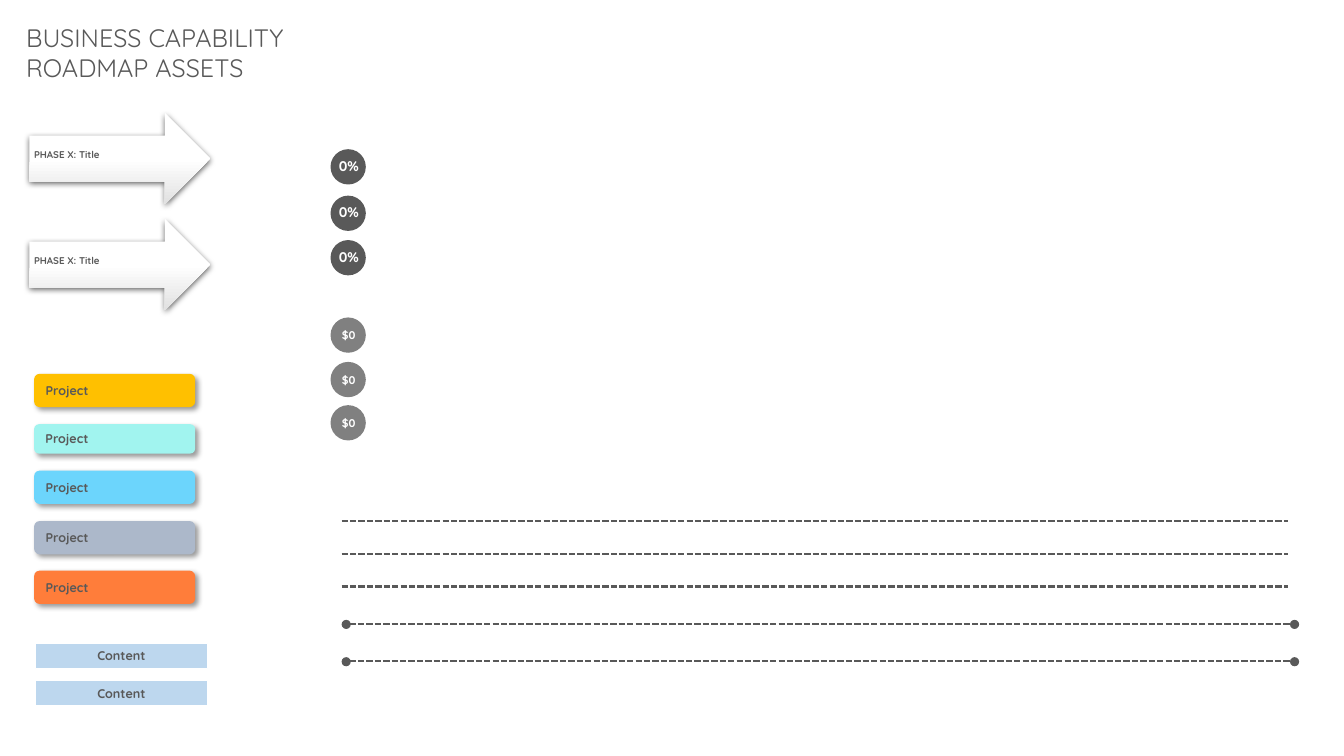
import pptx
import pptx.util
import pptx.dml.color
import pptx.enum.dml
import pptx.enum.shapes
import pptx.enum.text
import pptx.oxml.ns
from lxml import etree

Cm, Pt = pptx.util.Cm, pptx.util.Pt
RGB = pptx.dml.color.RGBColor
Kind = pptx.enum.shapes.MSO_SHAPE
Align = pptx.enum.text.PP_ALIGN
Anchor = pptx.enum.text.MSO_ANCHOR
qn = pptx.oxml.ns.qn

# Colours
DARK = RGB(0x59, 0x59, 0x59)
GREY = RGB(0x80, 0x80, 0x80)
PALE = RGB(0xE1, 0xE1, 0xE1)
WHITE = RGB(0xFF, 0xFF, 0xFF)
GOLD = RGB(0xFF, 0xC0, 0x00)
MINT = RGB(0xA1, 0xF4, 0xEF)
SKY = RGB(0x6C, 0xD5, 0xFC)
SLATE = RGB(0xAC, 0xB8, 0xCA)
ORANGE = RGB(0xFF, 0x7D, 0x3A)
ICE = RGB(0xBD, 0xD7, 0xEE)

# Content, lengths in cm
FONT = "Quicksand"
TITLE = "BUSINESS CAPABILITY \vROADMAP ASSETS"
PHASES = [(2.84, "PHASE X: Title"), (5.51, "PHASE X: Title")]
PROJECTS = [  # top, height, colour, label
    (9.42, 0.84, GOLD, "Project"),
    (10.69, 0.74, MINT, "Project"),
    (11.86, 0.84, SKY, "Project"),
    (13.13, 0.84, SLATE, "Project"),
    (14.38, 0.84, ORANGE, "Project"),
]
BARS = [(16.21, "Content"), (17.15, "Content")]
BADGES = [  # label, size, colour, text offset, text height, tops
    ("0%", 10, DARK, 0.08, 0.69, (3.76, 4.93, 6.05)),
    ("$0", 8, GREY, 0.15, 0.61, (8.0, 9.12, 10.21)),
]
RULES = [13.13, 13.97, 14.78]
SPANS = [15.72, 16.66]
LEFT, LENGTH, DOT = 8.61, 23.85, 0.23
SOFT = (63, 4.5, 1.5, 90)  # alpha, blur, distance, angle
DEEP = (40, 4, 3, 45)

deck = pptx.Presentation()
deck.slide_width, deck.slide_height = Cm(33.87), Cm(19.05)
slide = deck.slides.add_slide(deck.slide_layouts[6])
shapes = slide.shapes


def write(shape, text, size, color=DARK, bold=True, align=Align.LEFT,
          anchor=Anchor.MIDDLE, pad=(0.25, 0.13)):
    frame = shape.text_frame
    frame.word_wrap = True
    frame.vertical_anchor = anchor
    frame.margin_left = frame.margin_right = Cm(pad[0])
    frame.margin_top = frame.margin_bottom = Cm(pad[1])
    frame.text = text
    para = frame.paragraphs[0]
    para.alignment = align
    font = para.font
    font.name, font.size, font.bold = FONT, Pt(size), bold
    font.color.rgb = color
    return para


def label(x, y, w, h, *args, **style):
    return write(shapes.add_textbox(Cm(x), Cm(y), Cm(w), Cm(h)), *args, **style)


def draw(kind, x, y, w, h, color=None, shade=None):
    shape = shapes.add_shape(kind, Cm(x), Cm(y), Cm(w), Cm(h))
    shape.shadow.inherit = False
    shape.line.fill.background()
    if color is not None:
        shape.fill.solid()
        shape.fill.fore_color.rgb = color
    if shade:
        alpha, blur, dist, angle = shade
        effects = shape._element.spPr.find(qn("a:effectLst"))
        outer = etree.SubElement(
            effects, qn("a:outerShdw"), blurRad=str(Pt(blur)),
            dist=str(Pt(dist)), dir=str(angle * 60000), rotWithShape="0")
        black = etree.SubElement(outer, qn("a:srgbClr"), val="000000")
        etree.SubElement(black, qn("a:alpha"), val=str(alpha * 1000))
    return shape


def dash(x, y):
    line = shapes.add_connector(
        pptx.enum.shapes.MSO_CONNECTOR.STRAIGHT,
        Cm(x), Cm(y), Cm(x + LENGTH), Cm(y))
    line.line.color.rgb = DARK
    line.line.width = Pt(1.5)
    line.line.dash_style = pptx.enum.dml.MSO_LINE.SQUARE_DOT
    etree.SubElement(line._element.spPr, qn("a:effectLst"))


# Title
label(0.41, 0.43, 16.94, 1.8, TITLE, 18, bold=False, anchor=Anchor.TOP)

# Phase arrows
for top, text in PHASES:
    arrow = draw(Kind.RIGHT_ARROW, 0.74, top, 4.57, 2.31, shade=SOFT)
    arrow.fill.gradient()
    arrow.fill.gradient_angle = 270
    stops = zip(arrow.fill.gradient_stops, (0.5, 1), (WHITE, PALE))
    for stop, place, color in stops:
        stop.position = place
        stop.color.rgb = color
    para = label(0.86, top + 0.74, 3.51, 0.69, text, 7, pad=(0, 0.2))
    para.line_spacing = 0.9

# Project boxes
for top, height, color, text in PROJECTS:
    box = draw(Kind.ROUNDED_RECTANGLE, 0.86, top, 4.06, height, color, DEEP)
    write(box, text, 9)

# Content bars
for top, text in BARS:
    bar = draw(Kind.RECTANGLE, 0.89, top, 4.34, 0.64, ICE)
    bar.line.color.rgb = WHITE
    bar.line.width = Pt(1)
    write(bar, text, 9, align=Align.CENTER)

# Round badges
for text, size, color, shift, height, tops in BADGES:
    for top in tops:
        draw(Kind.OVAL, 8.33, top, 0.89, 0.89, color)
        label(8.18, top + shift, 1.22, height, text, size, WHITE,
              align=Align.CENTER, anchor=Anchor.TOP)

# Dashed rules, then spans with end dots
for y in RULES:
    dash(LEFT, y)
for y in SPANS:
    dash(LEFT + 0.2, y)
    for x in (LEFT, LEFT + LENGTH + 0.05):
        draw(Kind.OVAL, x, y - 0.1, DOT, DOT, DARK)

deck.save("out.pptx")
